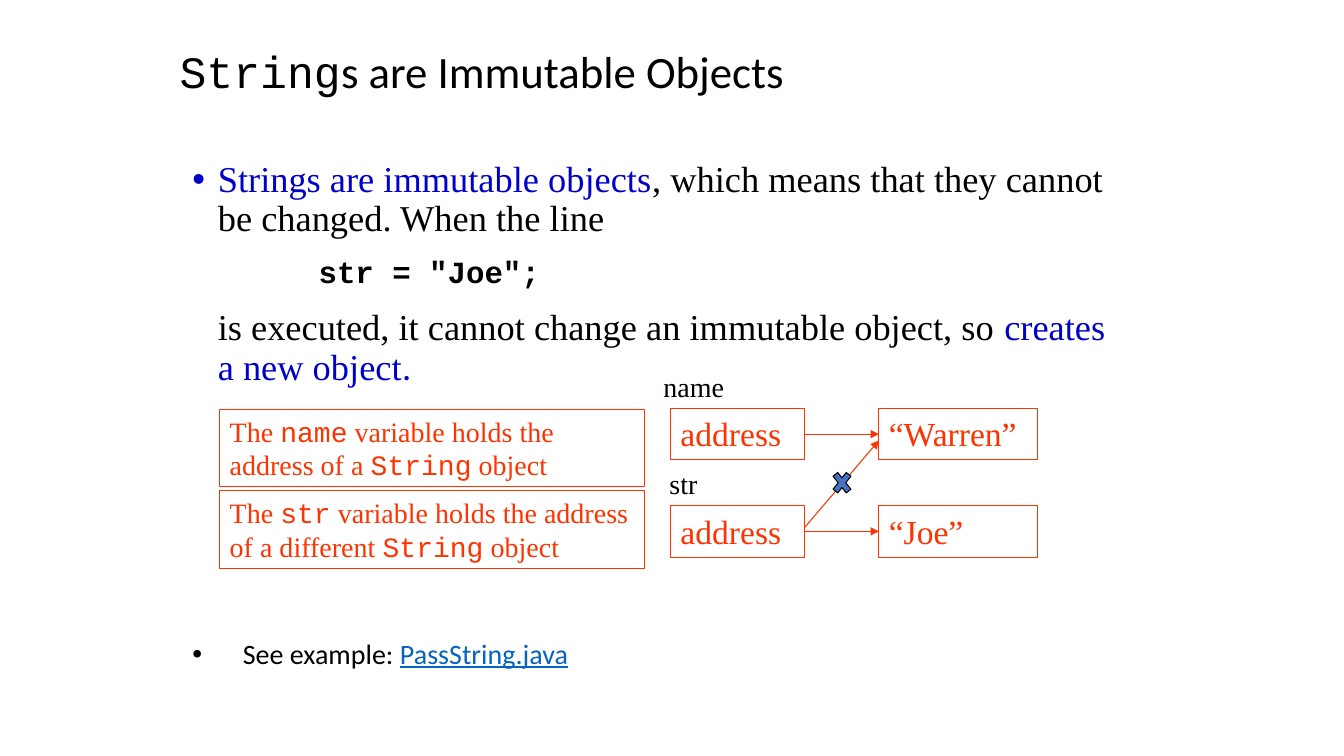
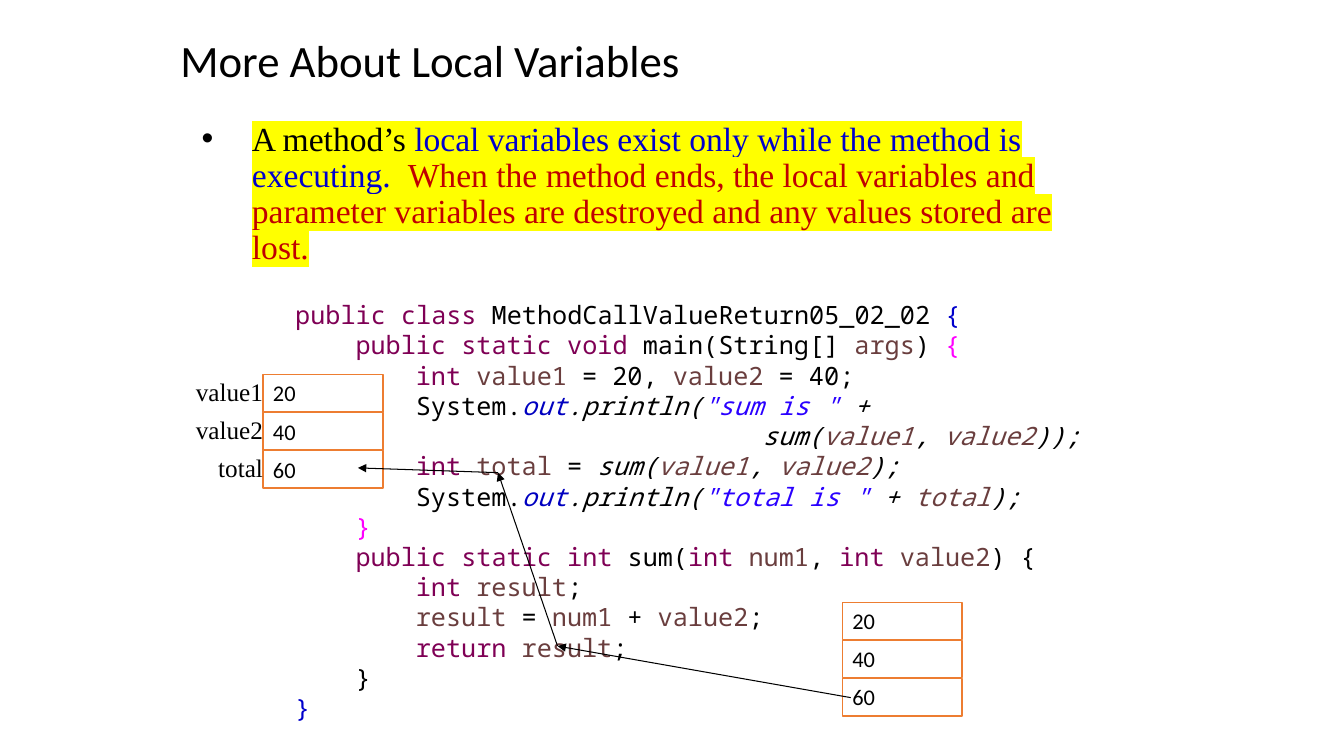
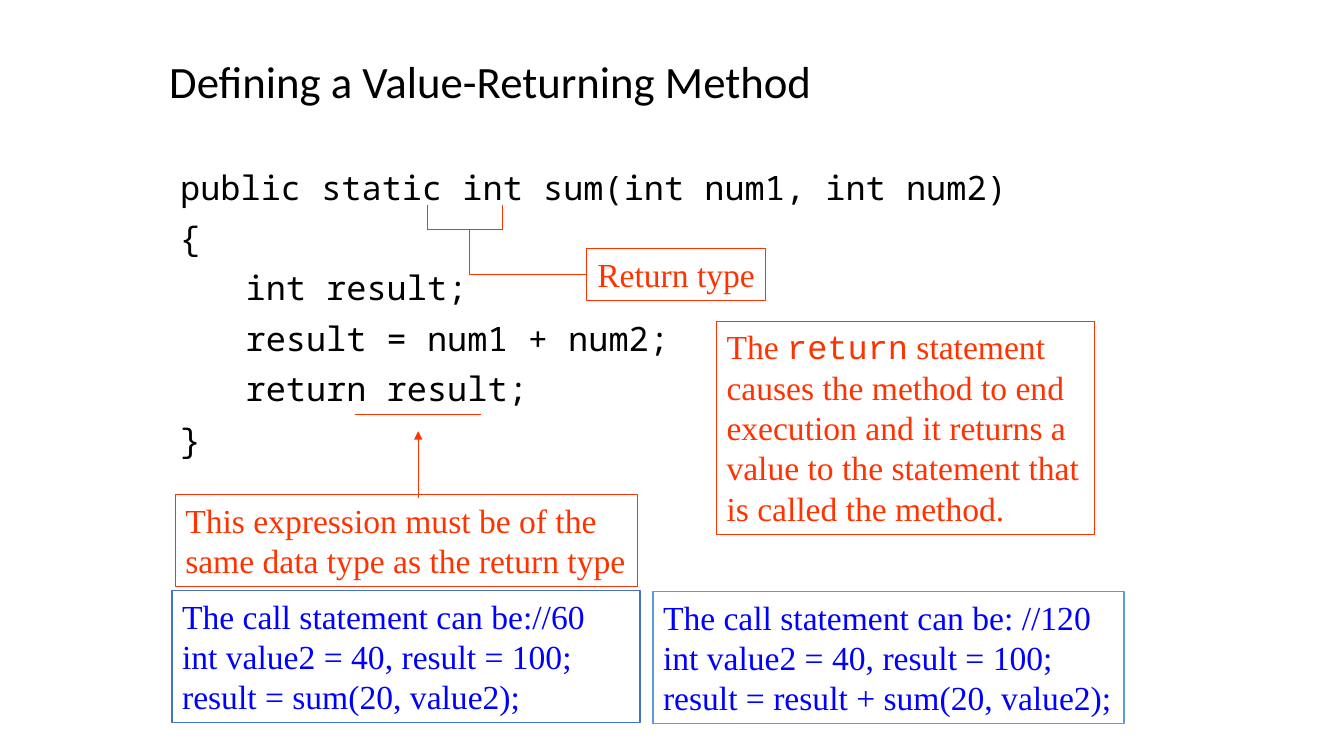
from dataclasses import dataclass
from itertools import pairwise

from lxml import etree
from pptx import Presentation
from pptx.dml.color import RGBColor
from pptx.enum.shapes import MSO_CONNECTOR, MSO_SHAPE
from pptx.enum.text import MSO_ANCHOR, MSO_AUTO_SIZE, PP_ALIGN
from pptx.oxml.ns import qn
from pptx.util import Cm, Pt

RECTANGLE, MULTIPLY = MSO_SHAPE.RECTANGLE, MSO_SHAPE.MATH_MULTIPLY
STRAIGHT = MSO_CONNECTOR.STRAIGHT
TOP, MIDDLE = MSO_ANCHOR.TOP, MSO_ANCHOR.MIDDLE
LEFT, CENTER, RIGHT = PP_ALIGN.LEFT, PP_ALIGN.CENTER, PP_ALIGN.RIGHT
NO_AUTOFIT = MSO_AUTO_SIZE.NONE
LEFT_SIDE, RIGHT_SIDE = 1, 3
TITLE_ONLY = 5


@dataclass(frozen=True)
class Theme:
    """Colours, typefaces and sizes shared by the slides."""
    black: str = "000000"
    white: str = "FFFFFF"
    red: str = "FF3300"
    dark_red: str = "C00000"
    blue: str = "0000CC"
    call_blue: str = "0000FF"
    link: str = "0563C1"
    orange: str = "ED7D31"
    accent: str = "4472C4"
    light_accent: str = "5B9BD5"
    yellow: str = "FFFF00"
    keyword: str = "7F0055"
    variable: str = "6A3E3E"
    field: str = "0000C0"
    literal: str = "2A00FF"
    magenta: str = "FF00FF"
    sans: str = "Calibri"
    serif: str = "Times New Roman"
    courier: str = "Courier New"
    mono: str = "Noto Sans Mono"
    title: int = 32
    lead: int = 26
    text: int = 24
    code_line: int = 22
    small: int = 20
    code: int = 18
    cell: int = 16
    thin: float = 0.75
    medium: float = 1
    tight: float = 0.9


THEME = Theme()


@dataclass(frozen=True)
class Look:
    """Character format; an unset part is inherited."""
    name: str = None
    size: int = None
    color: str = None
    bold: bool = None
    italic: bool = None
    underline: bool = None
    highlight: str = None


TITLE = Look(THEME.sans, THEME.title, THEME.black)
LEAD = Look(THEME.serif, THEME.lead, THEME.black)
LABEL = Look(THEME.serif, THEME.small, THEME.black)
NOTE = Look(THEME.serif, THEME.small, THEME.red)
BIG_NOTE = Look(THEME.serif, THEME.text, THEME.red)
CALL = Look(THEME.serif, THEME.text, THEME.call_blue)
CELL = Look(THEME.sans, THEME.cell, THEME.black)
CELL_LABEL = Look(THEME.serif, THEME.code, THEME.black)
CODE = Look(THEME.mono, THEME.code, THEME.black)
BIG_CODE = Look(THEME.mono, THEME.text, THEME.black)
COURIER = Look(THEME.courier)
BLUE = Look(color=THEME.blue)
KEYWORD = Look(color=THEME.keyword)
VARIABLE = Look(color=THEME.variable)
MAGENTA = Look(color=THEME.magenta)
ITALIC = Look(italic=True)
ITALIC_VARIABLE = Look(color=THEME.variable, italic=True)
FIELD = Look(color=THEME.field, italic=True)
LITERAL = Look(color=THEME.literal, italic=True)

SUM_ARGUMENTS = [("sum(", ITALIC), ("value1", ITALIC_VARIABLE), (", ", ITALIC),
                 ("value2", ITALIC_VARIABLE)]
PRINT_CALL = ["System.", ("out", FIELD), (".println(", ITALIC)]
PROGRAM = [
    (0, [("public class", KEYWORD), " MethodCallValueReturn05_02_02 ", ("{", BLUE)]),
    (1, [("public static void", KEYWORD), " main(String[] ", ("args", VARIABLE), ")",
         (" {", MAGENTA)]),
    (2, [("int ", KEYWORD), ("value1", VARIABLE), " = 20, ", ("value2", VARIABLE),
         " = 40;"]),
    (2, [*PRINT_CALL, ("\"sum is \"", LITERAL), (" +", ITALIC)]),
    (7.75, [*SUM_ARGUMENTS, ("));", ITALIC)]),
    (2, [("int ", KEYWORD), ("total", VARIABLE), " = ", *SUM_ARGUMENTS, (");", ITALIC)]),
    (2, [*PRINT_CALL, ("\"total is \"", LITERAL), (" + ", ITALIC),
         ("total", ITALIC_VARIABLE), (");", ITALIC)]),
    (1, [("}", MAGENTA)]),
    (1, [("public static int", KEYWORD), " sum(", ("int ", KEYWORD), ("num1", VARIABLE),
         ", ", ("int ", KEYWORD), ("value2", VARIABLE), ") {"]),
    (2, [("int ", KEYWORD), ("result", VARIABLE), ";"]),
    (2, [("result", VARIABLE), " = ", ("num1", VARIABLE), " + ", ("value2", VARIABLE),
         ";"]),
    (2, [("return ", KEYWORD), ("result", VARIABLE), ";"]),
    (1, ["}"]),
    (0, [("}", BLUE)]),
]


def centimetres(box):
    """Turn a row of numbers into lengths."""
    return [Cm(number) for number in box]


def apply_look(font, look):
    """Set the parts of a font that the look names."""
    for part in ("name", "bold", "italic", "underline"):
        if getattr(look, part) is not None:
            setattr(font, part, getattr(look, part))
    if look.size:
        font.size = Pt(look.size)
    if look.color:
        font.color.rgb = RGBColor.from_string(look.color)


def write(paragraph, runs, look, align=LEFT, margin=0, hanging=0, bullet=False,
          spacing=None, before=0):
    """Fill a paragraph with runs, each a text or a text with its own look."""
    properties = paragraph._p.get_or_add_pPr()
    properties.set("marL", str(Cm(margin)))
    properties.set("indent", str(-Cm(hanging)))
    if bullet:
        etree.SubElement(properties, qn("a:buFont"), typeface="Arial")
        etree.SubElement(properties, qn("a:buChar"), char="•")
    paragraph.alignment = align
    paragraph.space_before = Pt(before)
    if spacing:
        paragraph.line_spacing = spacing
    apply_look(paragraph.font, look)
    for item in runs:
        text, run_look = (item, Look()) if isinstance(item, str) else item
        run = paragraph.add_run()
        run.text = text
        apply_look(run.font, run_look)
        if run_look.highlight:
            highlight = etree.Element(qn("a:highlight"))
            etree.SubElement(highlight, qn("a:srgbClr"), val=run_look.highlight)
            run._r.get_or_add_rPr().find(qn("a:solidFill")).addnext(highlight)


def write_all(shape, paragraphs, wrap=True):
    """Write paragraphs, each a dict of arguments for write."""
    frame = shape.text_frame
    frame.word_wrap = wrap
    frame.auto_size = NO_AUTOFIT
    frame.vertical_anchor = TOP
    for index, arguments in enumerate(paragraphs):
        paragraph = frame.add_paragraph() if index else frame.paragraphs[0]
        write(paragraph, **arguments)


def add_text(slide, box, paragraphs):
    """Add a plain text box."""
    write_all(slide.shapes.add_textbox(*centimetres(box)), paragraphs)


def add_shape(slide, kind, box, line, width=THEME.thin, fill=None):
    """Add a preset shape with a flat outline."""
    shape = slide.shapes.add_shape(kind, *centimetres(box))
    shape.shadow.inherit = False
    if fill:
        shape.fill.solid()
        shape.fill.fore_color.rgb = RGBColor.from_string(fill)
    else:
        shape.fill.background()
    shape.line.color.rgb = RGBColor.from_string(line)
    shape.line.width = Pt(width)
    return shape


def add_note(slide, box, runs, look, align=LEFT, wrap=True):
    """Add a red outlined box with one paragraph."""
    shape = add_shape(slide, RECTANGLE, box, THEME.red)
    write_all(shape, [dict(runs=runs, look=look, align=align)], wrap)
    return shape


def add_line(slide, start, end, color=THEME.red, arrow=False):
    """Add a thin straight line, with an arrowhead at its end if asked."""
    connector = slide.shapes.add_connector(STRAIGHT, *centimetres((*start, *end)))
    connector.line.color.rgb = RGBColor.from_string(color)
    connector.line.width = Pt(THEME.thin)
    properties = connector._element.spPr
    if arrow:
        etree.SubElement(properties.find(qn("a:ln")), qn("a:tailEnd"), type="triangle")
    etree.SubElement(properties, qn("a:effectLst"))
    return connector


def add_titled_slide(presentation, box, runs):
    """Add a slide and place its title."""
    slide = presentation.slides.add_slide(presentation.slide_layouts[TITLE_ONLY])
    title = slide.shapes.title
    title.left, title.top, title.width, title.height = centimetres(box)
    write_all(title, [dict(runs=runs, look=TITLE, spacing=THEME.tight)])
    title.text_frame.vertical_anchor = MIDDLE
    return slide


def add_reference_diagram(slide, left, top):
    """Draw the two variables and the objects they refer to."""
    pitch, height, column = 2.45, 1.3, 5.25
    rows = [("name", "“Warren”", -0.43), ("str", "“Joe”", -0.28)]
    for index, (variable, value, shift) in enumerate(rows):
        y = top + index * pitch
        add_text(slide, (left + shift, y - 1.1, 2.74, 1.12),
                 [dict(runs=[variable], look=LABEL)])
        address = add_note(slide, (left, y, 3.38, height), ["address"], BIG_NOTE)
        target = add_note(slide, (left + column, y, 4.01, height), [value], BIG_NOTE)
        arrow = add_line(slide, (left, y), (left + column, y), arrow=True)
        arrow.begin_connect(address, RIGHT_SIDE)
        arrow.end_connect(target, LEFT_SIDE)
    add_line(slide, (left + 3.38, top + 3), (left + column, top + 0.81), arrow=True)
    add_shape(slide, MULTIPLY, (left + 4, top + 1.47, 0.64, 0.81), THEME.black,
              fill=THEME.accent)


def add_memory_cells(slide, left, top, labels=()):
    """Stack the three stored values, with labels at their left."""
    pitch = 0.96
    for index, value in enumerate(("20", "40", "60")):
        cell = add_shape(slide, RECTANGLE, (left, top + index * pitch, 3.02, 0.94),
                         THEME.orange, THEME.medium, THEME.white)
        write_all(cell, [dict(runs=[value], look=CELL)])
    for index, label in enumerate(labels):
        add_text(slide, (left - 2.54, top - 0.08 + index * pitch, 2.79, 1.02),
                 [dict(runs=[label], look=CELL_LABEL, align=RIGHT)])


def add_return_type_callout(slide, left, top):
    """Bracket the return type and join it to its note."""
    width, bar, stem, elbow = 1.9, top + 0.63, left + 1.07, top + 1.76
    note = add_note(slide, (left + 4.01, elbow - 0.65, 4.52, 1.3), ["Return type"],
                    BIG_NOTE, CENTER, wrap=False)
    bracket = [(left, top), (left, bar), (left + width, bar), (left + width, top)]
    for start, end in pairwise(bracket):
        add_line(slide, start, end)
    add_line(slide, (stem, bar), (stem, elbow))
    add_line(slide, (stem, elbow), (left + 4.01, elbow)).end_connect(note, LEFT_SIDE)


def add_call_example(slide, box, line, lines):
    """Add a white box with a sample call."""
    shape = add_shape(slide, RECTANGLE, box, line, THEME.medium, THEME.white)
    write_all(shape, [dict(runs=[text], look=CALL) for text in lines])


def build_strings_slide(presentation):
    """Explain that strings cannot be changed."""
    slide = add_titled_slide(presentation, (4.27, 0.48, 16.23, 2.77),
                             [("String", COURIER), "s are Immutable Objects"])
    tight = dict(spacing=THEME.tight)
    add_text(slide, (4.6, 3.94, 23.72, 14.05), [
        dict(runs=[("Strings are immutable objects", BLUE),
                   ", which means that they cannot be changed. When the line"],
             look=LEAD, margin=0.64, hanging=0.64, bullet=True, **tight),
        dict(runs=["str = \"Joe\";"], margin=3.18, before=12,
             look=Look(THEME.courier, THEME.code_line, THEME.black, bold=True), **tight),
        dict(runs=["is executed, it cannot change an immutable object, so ",
                   ("creates a new object", BLUE),
                   (".", Look(THEME.sans, color=THEME.blue))],
             look=LEAD, margin=0.64, before=14, **tight),
        dict(runs=["See example: ",
                   ("PassString.java", Look(color=THEME.link, underline=True))],
             look=Look(THEME.sans, THEME.small, THEME.black),
             margin=1.27, hanging=1.27, bullet=True, before=180, **tight),
    ])
    notes = [("name", " variable holds the address of a "),
             ("str", " variable holds the address of a different ")]
    for index, (variable, middle) in enumerate(notes):
        add_note(slide, (5.54, 10.31 + index * 2.06, 10.71, 1.96),
                 ["The ", (variable, COURIER), middle, ("String", COURIER), " object"],
                 NOTE)
    add_reference_diagram(slide, 16.9, 10.29)


def build_local_variables_slide(presentation):
    """Show the life of local variables beside a program."""
    slide = add_titled_slide(presentation, (4.29, 0.56, 13.69, 2.06),
                             ["More About Local Variables"])
    marked = [("A method’s ", THEME.black),
              ("local variables exist only while the method is executing. ", THEME.blue),
              (" ", THEME.black),
              ("When the method ends, the local variables and parameter variables "
               "are destroyed and any values stored are lost.", THEME.dark_red)]
    add_text(slide, (4.83, 2.95, 23.55, 4), [
        dict(runs=[(text, Look(color=color, highlight=THEME.yellow))
                   for text, color in marked],
             look=Look(THEME.serif, THEME.text), margin=1.27, hanging=1.27,
             bullet=True, spacing=THEME.tight)])
    add_memory_cells(slide, 21.23, 15.18)
    add_memory_cells(slide, 6.63, 9.44, ("value1", "value2", "total"))
    add_text(slide, (6.1, 7.42, 22.6, 11.02), [
        dict(runs=runs, look=CODE, margin=1.09 + depth * 1.52, spacing=Pt(21.6))
        for depth, runs in PROGRAM])
    stops = [(21.44, 17.58), (14.05, 16.28), (12.55, 11.91), (9.02, 11.79)]
    for start, end in pairwise(stops):
        add_line(slide, start, end, THEME.black, arrow=True)


def build_value_returning_slide(presentation):
    """Annotate the parts of a value-returning method."""
    slide = add_titled_slide(presentation, (4.01, 0.91, 18.06, 2.41),
                             ["Defining a Value-Returning Method"])
    method = [(0, "public static int sum(int num1, int num2)"), (0, ("{", COURIER)),
              (1.65, "int result;"), (1.65, "result = num1 + num2;"),
              (1.65, "return result;"), (0, ("}", COURIER))]
    add_text(slide, (4.29, 4.17, 23.04, 8), [
        dict(runs=[run], look=BIG_CODE, margin=margin, spacing=Pt(26), before=10)
        for margin, run in method])
    add_return_type_callout(slide, 10.77, 5.16)
    add_line(slide, (8.94, 10.44), (12.12, 10.44))
    add_note(slide, (4.42, 12.47, 11.65, 2.31),
             ["This expression must be of the same data type as the return type"],
             BIG_NOTE)
    add_line(slide, (10.54, 12.55), (10.54, 10.87), arrow=True)
    add_note(slide, (18.06, 8.1, 9.53, 5.38),
             ["The ", ("return", COURIER), " statement causes the method to end "
              "execution and it returns a value to the statement that is called "
              "the method."], BIG_NOTE)
    declaration = "int value2 = 40, result = 100;"
    add_call_example(slide, (4.34, 14.88, 11.79, 3.33), THEME.accent,
                     ["The call statement can be://60", declaration,
                      "result = sum(20, value2);"])
    add_call_example(slide, (16.46, 14.91, 11.87, 3.33), THEME.light_accent,
                     ["The call statement can be: //120", declaration,
                      "result = result + sum(20, value2);"])


def main():
    """Build and save the presentation."""
    presentation = Presentation()
    presentation.slide_width, presentation.slide_height = Cm(33.87), Cm(19.05)
    build_strings_slide(presentation)
    build_local_variables_slide(presentation)
    build_value_returning_slide(presentation)
    presentation.save("out.pptx")


if __name__ == "__main__":
    main()
